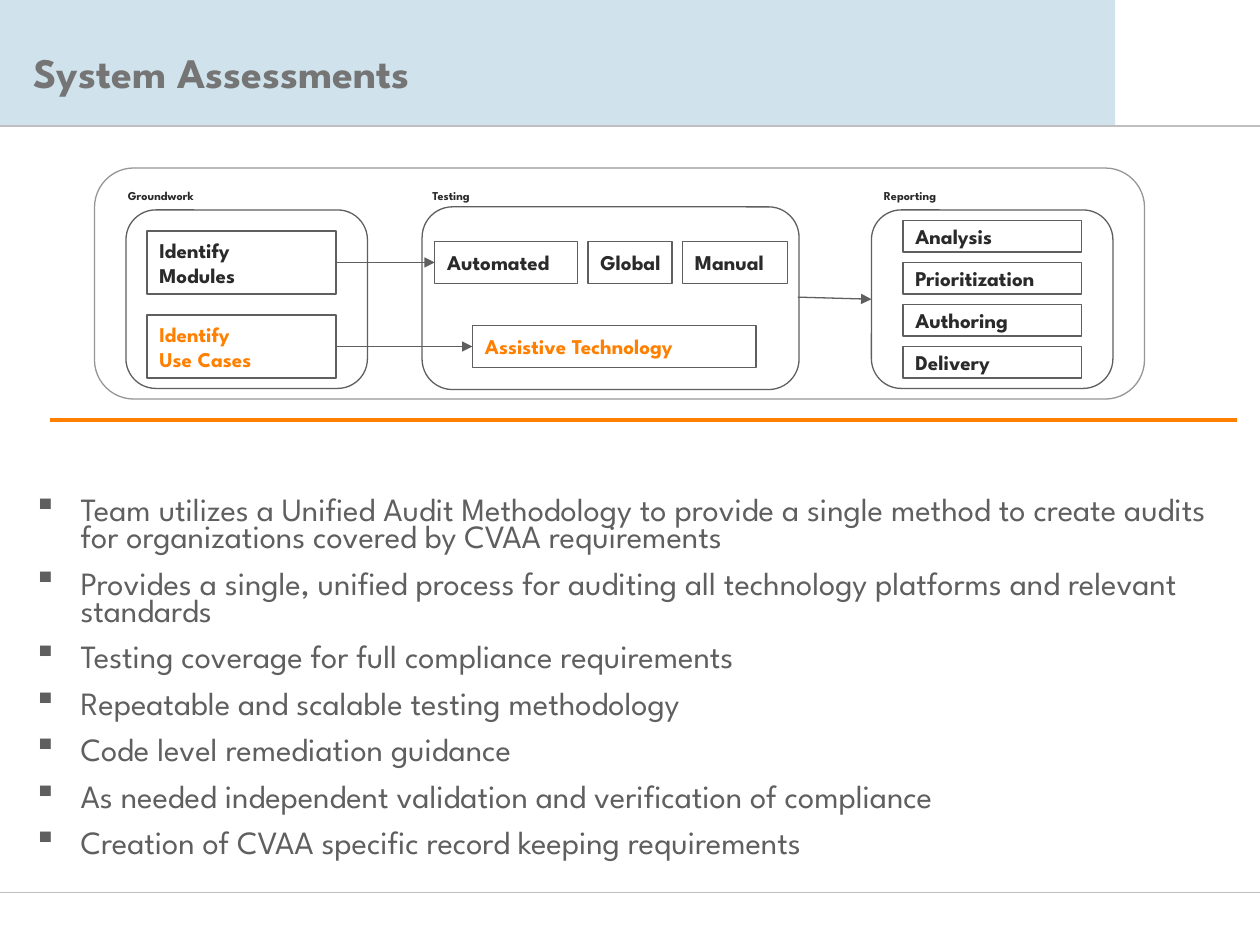
from pptx import Presentation
from pptx.dml.color import RGBColor
from pptx.enum.shapes import MSO_CONNECTOR, MSO_SHAPE as SHAPE
from pptx.enum.text import MSO_ANCHOR as ANCHOR, MSO_AUTO_SIZE as AUTO_SIZE, PP_ALIGN as ALIGN
from pptx.oxml.ns import qn
from pptx.util import Pt
from lxml.etree import SubElement

PX = 7620  # 120 px to the inch
FONT = "League Spartan"
BAND = RGBColor(0xD0, 0xE3, 0xED)
RULE = RGBColor(0xBF, 0xBF, 0xBF)
FRAME = RGBColor(0x96, 0x96, 0x96)
GRAY = RGBColor(0x5F, 0x5F, 0x5F)
TITLE = RGBColor(0x75, 0x75, 0x75)
DARK = RGBColor(0x2A, 0x2A, 0x2A)
ORANGE = RGBColor(0xFF, 0x80, 0x00)

presentation = Presentation()
presentation.slide_width = 1200 * PX
presentation.slide_height = 900 * PX
slide = presentation.slides.add_slide(presentation.slide_layouts[6])


def add_outline(kind, left, top, width, height, color=GRAY):
    shape = slide.shapes.add_shape(kind, left * PX, top * PX, width * PX, height * PX)
    shape.shadow.inherit = False
    shape.fill.background()
    shape.line.color.rgb = color
    shape.line.width = Pt(0.75)
    return shape


def add_line(x1, y1, x2, y2, color, width=0.75, arrow=False):
    line = slide.shapes.add_connector(
        MSO_CONNECTOR.STRAIGHT, x1 * PX, y1 * PX, x2 * PX, y2 * PX)
    line.line.color.rgb = color
    line.line.width = Pt(width)
    if arrow:
        SubElement(line.line._get_or_add_ln(), qn("a:tailEnd"), type="triangle")
    SubElement(line._element.spPr, qn("a:effectLst"))


# Header band and page rules
band = add_outline(SHAPE.RECTANGLE, 0, 0, 1062, 120)
band.fill.solid()
band.fill.fore_color.rgb = BAND
band.line.fill.background()
for y in (120, 850):
    add_line(0, y, 1200, y, RULE)

# Title
title = slide.shapes.add_textbox(20 * PX, 16 * PX, 1030 * PX, 104 * PX).text_frame
title.word_wrap = True
title.vertical_anchor = ANCHOR.MIDDLE
title.text = "System Assessments"
font = title.paragraphs[0].font
font.name, font.size, font.bold = FONT, Pt(24), True
font.color.rgb = TITLE

# Frame around the process and its three stages
frame = add_outline(SHAPE.ROUNDED_RECTANGLE, 90, 160, 1000, 220, FRAME)
frame.adjustments[0] = 0.17
stages = [
    ("Groundwork", 110, 144, (120, 200, 230, 170)),
    ("Testing", 400, 95, (402, 197, 359, 174)),
    ("Reporting", 830, 120, (830, 200, 230, 170)),
]
for name, left, width, outline in stages:
    add_outline(SHAPE.FLOWCHART_ALTERNATE_PROCESS, *outline)
    label = slide.shapes.add_textbox(left * PX, 160 * PX, width * PX, 36 * PX).text_frame
    label.word_wrap = False
    label.auto_size = AUTO_SIZE.SHAPE_TO_FIT_TEXT
    label.text = name
    font = label.paragraphs[0].runs[0].font
    font.name, font.size, font.bold = FONT, Pt(12), True
    font.color.rgb = DARK
    font._element.set("baseline", "-25000")  # subscript

# Steps inside the stages
steps = [
    ("Identify\nModules", 140, 220, 180, 60, DARK),
    ("Identify\nUse Cases", 140, 300, 180, 60, ORANGE),
    ("Automated", 414, 230, 136, 40, DARK),
    ("Global", 560, 230, 80, 40, DARK),
    ("Manual", 650, 230, 100, 40, DARK),
    ("Assistive Technology", 450, 310, 270, 40, ORANGE),
]
reports = ["Analysis", "Prioritization", "Authoring", "Delivery"]
steps += [(name, 860, 210 + 40 * row, 170, 30, DARK) for row, name in enumerate(reports)]
for text, left, top, width, height, color in steps:
    step = add_outline(SHAPE.FLOWCHART_PROCESS, left, top, width, height).text_frame
    step.word_wrap = False
    step.vertical_anchor = ANCHOR.MIDDLE
    step.text = text
    for paragraph in step.paragraphs:
        paragraph.alignment = ALIGN.LEFT
        font = paragraph.font
        font.name, font.size, font.bold = FONT, Pt(12), True
        font.color.rgb = color

# Arrows between the stages
for ends in ((320, 250, 414, 250), (320, 330, 450, 330), (760, 283, 830, 285)):
    add_line(*ends, GRAY, arrow=True)

# Divider
add_line(48, 400, 1178, 400, ORANGE, 2)

# Bullets
bullets = [
    "Team utilizes a Unified Audit Methodology to provide a single method to create audits "
    "for organizations covered by CVAA requirements",
    "Provides a single, unified process for auditing all technology platforms and relevant standards",
    "Testing coverage for full compliance requirements",
    "Repeatable and scalable testing methodology",
    "Code level remediation guidance",
    "As needed independent validation and verification of compliance",
    "Creation of CVAA specific record keeping requirements",
]
body = slide.shapes.add_textbox(20 * PX, 470 * PX, 1160 * PX, 390 * PX).text_frame
body.word_wrap = True
body.text = "\n".join(bullets)
for index, paragraph in enumerate(body.paragraphs):
    paragraph.line_spacing = 0.7
    paragraph.space_before = Pt(5 if index else 0)
    paragraph.space_after = Pt(6)
    properties = paragraph._p.get_or_add_pPr()
    properties.set("marL", str(45 * PX))
    properties.set("indent", str(-45 * PX))
    SubElement(properties, qn("a:buChar"), char="▪")
    paragraph.font.name, paragraph.font.size = FONT, Pt(18.5)
    paragraph.font.color.rgb = GRAY

presentation.save("out.pptx")
